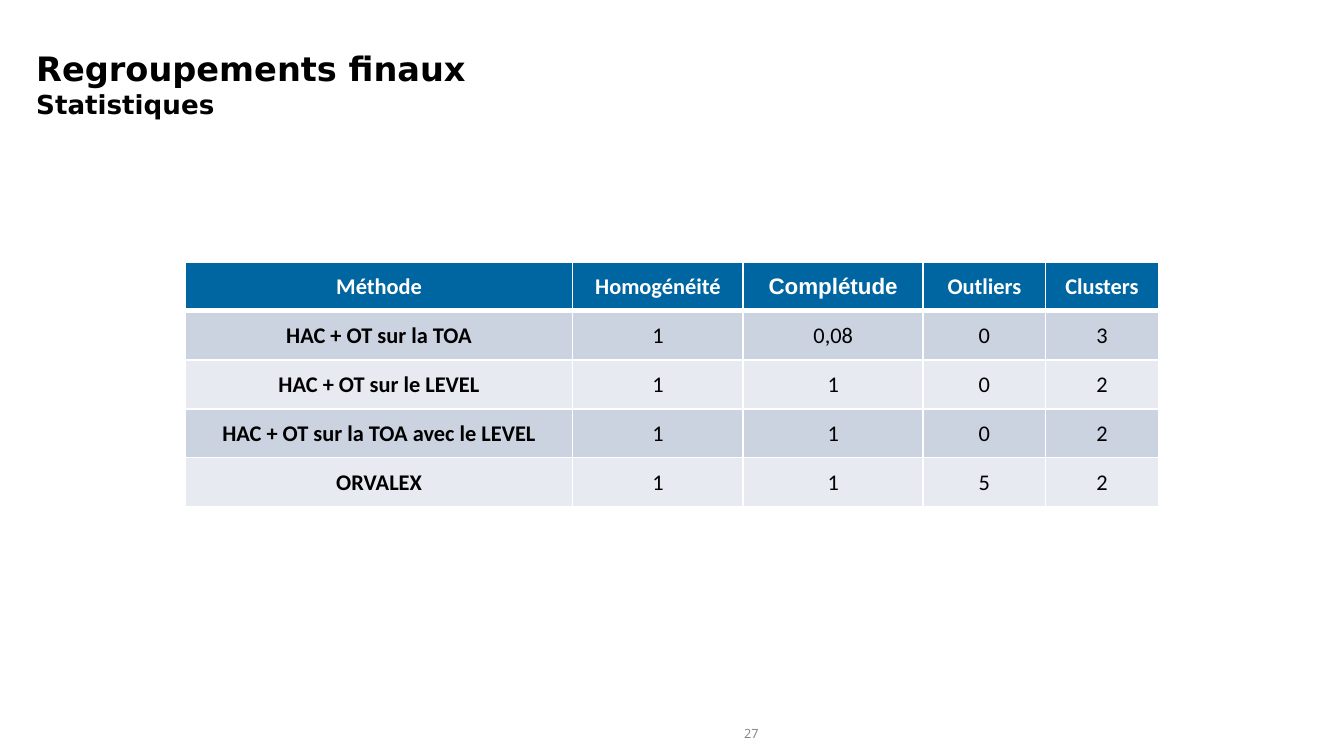
import pptx
import pptx.util
import pptx.dml.color
import pptx.enum.text
import pptx.oxml
import pptx.oxml.ns

Pt = pptx.util.Pt
Align = pptx.enum.text.PP_ALIGN
Anchor = pptx.enum.text.MSO_ANCHOR
Fit = pptx.enum.text.MSO_AUTO_SIZE

HUES = {
    "white": "FFFFFF",
    "black": "000000",
    "blue": "0066A1",
    "dark": "CCD3E0",
    "light": "E7EAF0",
    "gray": "818181",
}
HEADS = ["Méthode", "Homogénéité", "Complétude", "Outliers", "Clusters"]
ROWS = [
    ["HAC + OT sur la TOA", "1", "0,08", "0", "3"],
    ["HAC + OT sur le LEVEL", "1", "1", "0", "2"],
    ["HAC + OT sur la TOA avec le LEVEL", "1", "1", "0", "2"],
    ["ORVALEX", "1", "1", "5", "2"],
]
WIDTHS = [207.4, 91.4, 96.4, 65.6, 60.4]
HIGH = 26.2


def color(name):
    return pptx.dml.color.RGBColor.from_string(HUES[name])


def write(para, text, size=12, font="Calibri", hue="black", bold=False, align=Align.CENTER):
    para.alignment = align
    run = para.add_run()
    run.text = text
    run.font.size = Pt(size)
    run.font.name = font
    run.font.bold = bold
    run.font.color.rgb = color(hue)


def inset(frame, side, edge):
    frame.margin_left = frame.margin_right = Pt(side)
    frame.margin_top = frame.margin_bottom = Pt(edge)


def place(shape, left, top, width, height):
    shape.left, shape.top = Pt(left), Pt(top)
    shape.width, shape.height = Pt(width), Pt(height)


def border(cell, top, bottom):
    props = cell._tc.get_or_add_tcPr()
    sides = {"lnL": 1, "lnR": 1, "lnT": top, "lnB": bottom}
    for spot, (tag, width) in enumerate(sides.items()):
        line = pptx.oxml.parse_xml(
            f'<a:{tag} {pptx.oxml.ns.nsdecls("a")} w="{Pt(width)}"><a:solidFill>'
            f'<a:srgbClr val="{HUES["white"]}"/></a:solidFill></a:{tag}>'
        )
        props.insert(spot, line)


def fill(cell, text, row, col):
    head = row == 0
    cell.fill.solid()
    cell.fill.fore_color.rgb = color("blue" if head else ("light", "dark")[row % 2])
    border(cell, 3 if row == 1 else 1, 3 if head else 1)
    cell.vertical_anchor = Anchor.MIDDLE
    inset(cell, 0.7, 0.7)
    cell.margin_bottom = 0
    write(
        cell.text_frame.paragraphs[0],
        text,
        font="Arial" if text == "Complétude" else "Calibri",
        hue="white" if head else "black",
        bold=head or col == 0,
    )


def add_title(slide):
    title = slide.shapes.title
    place(title, 12.2, 22.3, 455.8, 44.6)
    frame = title.text_frame
    frame.word_wrap = True
    frame.auto_size = Fit.NONE
    frame.vertical_anchor = Anchor.TOP
    inset(frame, 7.2, 3.6)
    para = frame.paragraphs[0]
    style = dict(font="DejaVu Sans", bold=True, align=Align.LEFT)
    write(para, "Regroupements finaux", size=18, **style)
    para.add_line_break()
    write(para, "Statistiques", size=14, **style)


def add_grid(slide):
    data = [HEADS] + ROWS
    shape = slide.shapes.add_table(
        len(data), len(HEADS), Pt(99.4), Pt(140.4), Pt(sum(WIDTHS)), Pt(HIGH * len(data))
    )
    table = shape.table
    for col, width in enumerate(WIDTHS):
        table.columns[col].width = Pt(width)
    for row, texts in enumerate(data):
        table.rows[row].height = Pt(HIGH)
        for col, text in enumerate(texts):
            fill(table.cell(row, col), text, row, col)


def add_page(slide):
    box = slide.shapes.add_textbox(Pt(378), Pt(386), Pt(49), Pt(14.4))
    frame = box.text_frame
    frame.word_wrap = True
    frame.vertical_anchor = Anchor.MIDDLE
    inset(frame, 5.8, 2.9)
    write(frame.paragraphs[0], "27", size=6.8, font="Open Sans", hue="gray")


def main():
    deck = pptx.Presentation()
    deck.slide_width, deck.slide_height = Pt(720), Pt(405)
    slide = deck.slides.add_slide(deck.slide_layouts[5])
    add_page(slide)
    add_title(slide)
    add_grid(slide)
    deck.save("out.pptx")


if __name__ == "__main__":
    main()
